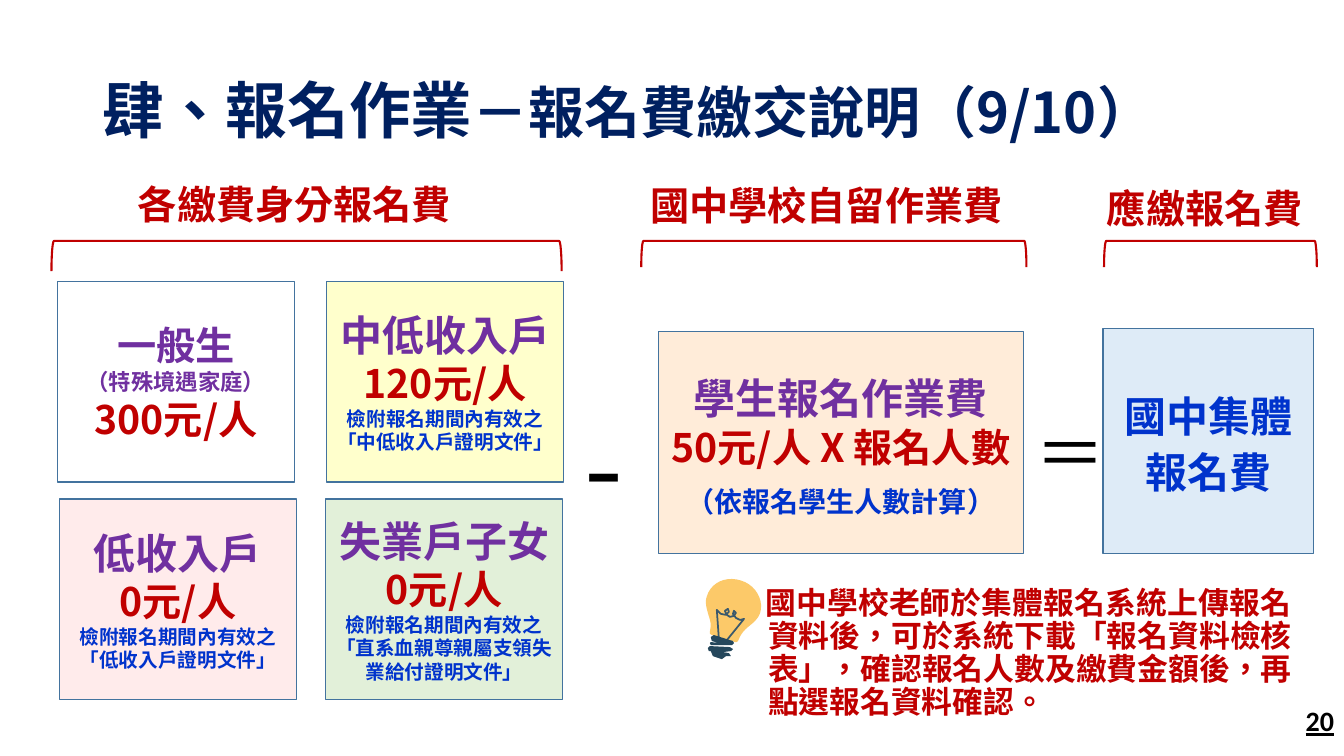
from pptx import Presentation
from pptx.dml.color import RGBColor
from pptx.enum.shapes import MSO_SHAPE as Preset
from pptx.enum.text import MSO_ANCHOR as Anchor, PP_ALIGN as Align
from pptx.oxml.ns import qn
from pptx.util import Inches, Pt
from lxml import etree

NOTO = "Noto Sans CJK SC"
RED, PURPLE, BLUE, NAVY, BLACK = "C00000", "7030A0", "0033CC", "002060", "000000"
EDGE, BULB, FILAMENT, SOCKET = "43739E", "FCC969", "3B596C", "25475C"
PROOF = "檢附報名期間內有效之"


def rgb(code):
    return RGBColor.from_string(code)


def write(paragraph, text, size=28, color=RED, bold=True, font=NOTO, underline=None):
    """Add one formatted run; a newline at its end becomes a line break."""
    run = paragraph.add_run()
    run.text = text.rstrip("\n")
    face = run.font
    face.size, face.bold, face.name, face.underline = Pt(size), bold, font, underline
    face.color.rgb = rgb(color)
    properties = run._r.rPr
    properties.set("lang", "zh-TW")
    east_asian = etree.Element(qn("a:ea"), typeface=font)
    properties.find(qn("a:latin")).addnext(east_asian)
    if text.endswith("\n"):
        paragraph.add_line_break()


def fill_frame(frame, paragraphs, align=Align.LEFT, anchor=Anchor.TOP,
               wrap=True, spacing=None):
    """Write paragraphs, each a list of (text, format) runs."""
    frame.word_wrap = wrap
    frame.vertical_anchor = anchor
    for index, runs in enumerate(paragraphs):
        paragraph = frame.paragraphs[0] if index == 0 else frame.add_paragraph()
        paragraph.alignment = align
        if spacing:
            paragraph.line_spacing = spacing[index]
        for text, style in runs:
            write(paragraph, text, **style)


def add_label(slide, box, runs, **layout):
    label = slide.shapes.add_textbox(*map(Inches, box))
    fill_frame(label.text_frame, [runs], **layout)
    return label


def add_card(slide, box, color, paragraphs, spacing=None):
    card = slide.shapes.add_shape(Preset.RECTANGLE, *map(Inches, box))
    card.shadow.inherit = False
    card.fill.solid()
    card.fill.fore_color.rgb = rgb(color)
    card.line.color.rgb = rgb(EDGE)
    card.line.width = Pt(1)
    fill_frame(card.text_frame, paragraphs, Align.CENTER, Anchor.MIDDLE, spacing=spacing)


def add_bracket(slide, left, top, width, height):
    """Draw a bracket that opens downwards over the given area."""
    bracket = slide.shapes.add_shape(
        Preset.LEFT_BRACKET, Inches(left + (width - height) / 2),
        Inches(top + (height - width) / 2), Inches(height), Inches(width))
    bracket.rotation = 90
    bracket.shadow.inherit = False
    bracket.fill.background()
    bracket.line.color.rgb = rgb(RED)
    bracket.line.width = Pt(1.5)


def add_outline(slide, points, fill=None, line=None):
    """Draw a filled area, or an open line when only a line colour is given."""
    start, *others = [(Inches(x), Inches(y)) for x, y in points]
    builder = slide.shapes.build_freeform(*start)
    builder.add_line_segments(others, close=fill is not None)
    outline = builder.convert_to_shape()
    outline.shadow.inherit = False
    if fill:
        outline.fill.solid()
        outline.fill.fore_color.rgb = rgb(fill)
        outline.line.fill.background()
    else:
        outline.fill.background()
        outline.line.color.rgb = rgb(line)
        outline.line.width = Pt(1.25)


def smooth_points(start, curves, steps=10):
    """Turn cubic curves into points along them."""
    points = [start]
    for ends in curves:
        corners = [points[-1], *ends]
        for step in range(1, steps + 1):
            t = step / steps
            weights = ((1 - t) ** 3, 3 * t * (1 - t) ** 2, 3 * t * t * (1 - t), t ** 3)
            points.append(tuple(sum(w * c[axis] for w, c in zip(weights, corners))
                                for axis in (0, 1)))
    return points


def add_light_bulb(slide):
    glass = smooth_points((7.35, 5.76), [
        [(7.2, 5.71), (7.05, 5.78), (7.01, 5.92)],
        [(6.99, 5.98), (7.01, 6.04), (7.03, 6.11)],
        [(7.08, 6.24), (7.01, 6.28), (7.06, 6.3)],
        [(7.17, 6.33), (7.17, 6.33), (7.29, 6.37)],
        [(7.34, 6.38), (7.31, 6.31), (7.42, 6.22)],
        [(7.47, 6.18), (7.52, 6.14), (7.54, 6.08)],
        [(7.58, 5.95), (7.49, 5.8), (7.35, 5.76)]])
    add_outline(slide, glass, fill=BULB)
    wire = [(7.13, 6.33), (7.11, 6.05), (7.15, 6.09), (7.2, 6.1), (7.23, 6.07),
            (7.22, 6.04), (7.19, 6.06), (7.21, 6.1), (7.24, 6.12), (7.28, 6.11),
            (7.3, 6.08), (7.28, 6.06), (7.27, 6.09), (7.3, 6.13), (7.34, 6.15),
            (7.38, 6.14), (7.21, 6.35)]
    add_outline(slide, wire, line=FILAMENT)
    upper_thread = [(7.27, 6.36), (7.08, 6.3), (7.05, 6.32), (7.06, 6.36), (7.13, 6.38),
                    (7.05, 6.37), (7.04, 6.38), (7.05, 6.4), (7.26, 6.4), (7.28, 6.38)]
    lower_thread = [(7.23, 6.48), (7.17, 6.47), (7.25, 6.46), (7.27, 6.44), (7.24, 6.42),
                    (7.04, 6.41), (7.02, 6.43), (7.03, 6.46), (7.05, 6.46), (7.07, 6.51),
                    (7.16, 6.54), (7.2, 6.51), (7.25, 6.51)]
    for thread in (upper_thread, lower_thread):
        add_outline(slide, thread, fill=SOCKET)


def main():
    deck = Presentation()
    deck.slide_width, deck.slide_height = Inches(13.33), Inches(7.5)
    slide = deck.slides.add_slide(deck.slide_layouts[6])

    # Title
    add_label(slide, (0.92, 0.4, 11.5, 1.45),
              [("肆、報名作業", dict(size=44, color=NAVY)),
               ("－報名費繳交說明（9/10）", dict(size=40, color=NAVY))],
              anchor=Anchor.MIDDLE, spacing=[0.9])

    # Column headings and their brackets
    for heading, box in (("各繳費身分報名費", (1.27, 1.74, 3.34, 0.57)),
                         ("國中學校自留作業費", (6.35, 1.75, 3.74, 0.57)),
                         ("應繳報名費", (10.88, 1.78, 2.2, 0.57))):
        add_label(slide, box, [(heading, {})], wrap=False)
    for area in ((0.51, 2.39, 5.06, 0.3), (6.36, 2.39, 3.82, 0.26),
                 (10.95, 2.39, 2.11, 0.26)):
        add_bracket(slide, *area)

    # Fee for each kind of student
    group_name = dict(size=30, color=PURPLE)
    proof_style = dict(size=14, color=BLUE)
    add_card(slide, (0.57, 2.79, 2.35, 1.99), "FFFFFF",
             [[("一般生\n", dict(color=PURPLE)),
               ("（特殊境遇家庭）", dict(size=16, color=PURPLE))],
              [("300元/人", {})]])
    for left, top, color, group, fee, document in (
            (0.59, 4.95, "FFEBEB", "低收入戶", "0元/人", "「低收入戶證明文件」"),
            (3.24, 2.79, "FFFFCC", "中低收入戶", "120元/人", "「中低收入戶證明文件」"),
            (3.23, 4.95, "E2F0D9", "失業戶子女", "0元/人",
             "「直系血親尊親屬支領失業給付證明文件」")):
        add_card(slide, (left, top, 2.35, 1.99), color,
                 [[(group, group_name)],
                  [(fee + "\n", {}), (PROOF + document, proof_style)]])

    # Handling fee and amount due
    add_card(slide, (6.53, 3.29, 3.62, 2.2), "FFECD9",
             [[("學生報名作業費", group_name)], [("50元/人 X 報名人數", {})],
              [("（依報名學生人數計算）", dict(size=20, color=BLUE))]],
             spacing=[Pt(40), Pt(34), Pt(34)])
    add_card(slide, (10.94, 3.26, 2.09, 2.23), "DEEBF7",
             [[("國中集體報名費", dict(size=30, color=BLUE))]], spacing=[Pt(40)])

    # Minus and equals signs
    for sign, size, box in (("-", 80, (5.7, 3.89, 0.73, 1.45)),
                            ("＝", 50, (10.17, 4.01, 0.9, 0.94))):
        add_label(slide, box, [(sign, dict(size=size, color=BLACK, bold=False))],
                  wrap=False)

    # Reminder with its light bulb
    reminder = add_label(
        slide, (7.27, 5.78, 5.64, 1.33),
        [("國中學校老師於集體報名系統上傳報名資料後，可於系統下載「報名資料檢核表」，"
          "確認報名人數及繳費金額後，再點選報名資料確認。", dict(size=22))],
        align=Align.JUSTIFY, spacing=[0.9])
    indent = reminder.text_frame.paragraphs[0]._p.get_or_add_pPr()
    indent.set("marL", str(Inches(0.25)))
    indent.set("indent", str(Inches(-0.03)))
    add_light_bulb(slide)

    # Page number
    add_label(slide, (10.33, 6.95, 3, 0.4),
              [("20", dict(size=20, color=BLACK, font="Calibri", underline=True))],
              align=Align.RIGHT, anchor=Anchor.MIDDLE)

    deck.save("out.pptx")


if __name__ == "__main__":
    main()
